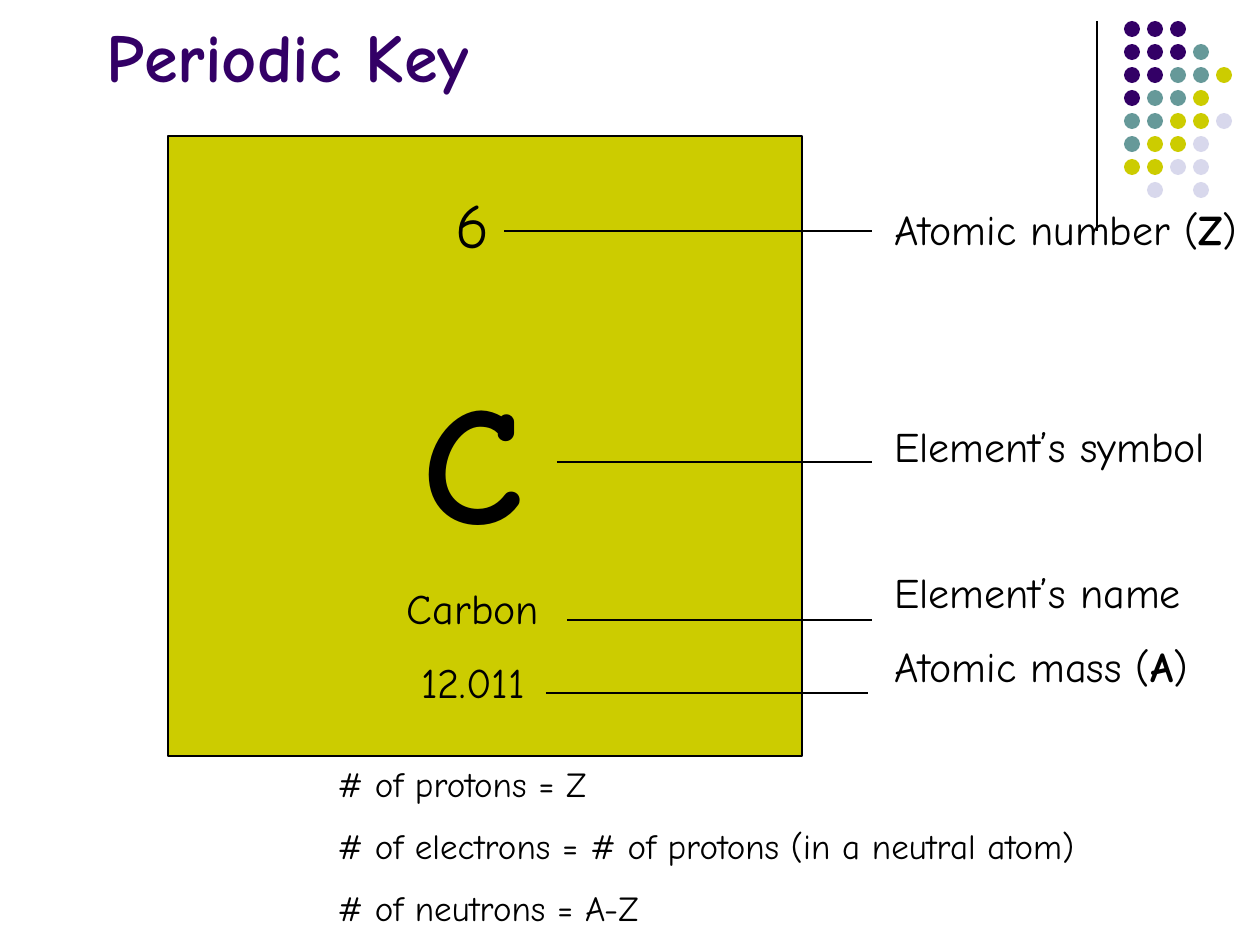
import pptx
import pptx.dml.color
import pptx.enum.shapes
import pptx.enum.text
import pptx.oxml
import pptx.util
from dataclasses import dataclass

EMU_PER_PX = 914400 / 126
ALIGN = pptx.enum.text.PP_ALIGN
ANCHOR = pptx.enum.text.MSO_ANCHOR
AUTO = pptx.enum.text.MSO_AUTO_SIZE
SHAPE = pptx.enum.shapes.MSO_SHAPE


@dataclass(frozen=True)
class Theme:
    font: str = "Comic Neue"
    ink: str = "000000"
    purple: str = "330066"
    teal: str = "669999"
    lime: str = "CCCC00"
    lilac: str = "D8D8EC"
    title: int = 39
    number: int = 36
    symbol: int = 96
    label: int = 24
    note: int = 20
    line_height: float = 1.13   # line pitch relative to type size
    gap: float = 0.57           # paragraph gap relative to type size


T = Theme()

# One letter per dot, one string per row
DOT_ROWS = ["PPP", "PPPT", "PPTTL", "PTTL", "TTLLV", "TLLV", "LLVV", " V V"]
DOT_COLORS = {"P": T.purple, "T": T.teal, "L": T.lime, "V": T.lilac}

# Pointer lines: x1, x2, y
POINTERS = [(504, 872, 231), (567, 872, 620), (546, 868, 693), (557, 872, 462)]


def px(n):
    return pptx.util.Emu(round(n * EMU_PER_PX))


def rgb(color):
    return pptx.dml.color.RGBColor.from_string(color)


def set_attrs(obj, values):
    for name, value in values.items():
        setattr(obj, name, value)


def place(shape, box):
    set_attrs(shape, dict(zip(("left", "top", "width", "height"), map(px, box))))


def add_run(p, text, size, color=T.ink, bold=False):
    r = p.add_run()
    r.text = text
    set_attrs(r.font, {"name": T.font, "size": pptx.util.Pt(size), "bold": bold})
    r.font.color.rgb = rgb(color)


def add_line(s, x1, y1, x2, y2, width=1):
    line = s.shapes.add_connector(
        pptx.enum.shapes.MSO_CONNECTOR.STRAIGHT, px(x1), px(y1), px(x2), px(y2))
    line.line.color.rgb = rgb(T.ink)
    line.line.width = pptx.util.Pt(width)
    line._element.spPr.append(pptx.oxml.parse_xml(
        '<a:effectLst xmlns:a="http://schemas.openxmlformats.org/drawingml/2006/main"/>'))


def add_filled(s, kind, box, fill, outline=None):
    sp = s.shapes.add_shape(kind, *map(px, box))
    sp.shadow.inherit = False
    sp.fill.solid()
    sp.fill.fore_color.rgb = rgb(fill)
    if outline:
        sp.line.color.rgb = rgb(outline)
        sp.line.width = pptx.util.Pt(1)
    else:
        sp.line.fill.background()


def add_text(s, box, paragraphs, align=ALIGN.LEFT):
    """Each paragraph is (size, skipped lines, [(text, bold), ...])."""
    tf = s.shapes.add_textbox(*map(px, box)).text_frame
    tf.word_wrap = True
    for i, (size, skipped, runs) in enumerate(paragraphs):
        p = tf.add_paragraph() if i else tf.paragraphs[0]
        p.alignment = align
        if i:
            space = T.gap + skipped * (T.line_height + T.gap)
            p.space_before = pptx.util.Pt(round(size * space, 1))
        for text, bold in runs:
            add_run(p, text, size, bold=bold)


def add_title(s, text):
    sp = s.shapes.title
    place(sp, (94, 21, 1071, 158))
    tf = sp.text_frame
    set_attrs(tf, {"auto_size": AUTO.NONE, "word_wrap": True,
                   "vertical_anchor": ANCHOR.BOTTOM, "margin_bottom": px(83)})
    p = tf.paragraphs[0]
    p.alignment = ALIGN.LEFT
    add_run(p, text, T.title, T.purple, True)


def add_dots(s, left=1124, top=21, pitch=23, size=16):
    for row, letters in enumerate(DOT_ROWS):
        for col, letter in enumerate(letters):
            if letter in DOT_COLORS:
                box = (left + col * pitch, top + row * pitch, size, size)
                add_filled(s, SHAPE.OVAL, box, DOT_COLORS[letter])


def main():
    prs = pptx.Presentation()
    set_attrs(prs, {"slide_width": px(1260), "slide_height": px(945)})
    s = prs.slides.add_slide(prs.slide_layouts[5])

    # Corner decoration and title
    add_line(s, 1097, 21, 1097, 231, 0.75)
    add_dots(s)
    add_title(s, "Periodic Key")

    # Element tile
    add_filled(s, SHAPE.FLOWCHART_PROCESS, (168, 136, 634, 620), T.lime, T.ink)
    add_text(s, (158, 179, 630, 542), [
        (T.number, 0, [("6", False)]),
        (T.symbol, 0, [("C", True)]),
        (T.label, 0, [("Carbon", False)]),
        (T.label, 0, [("12.011", False)]),
    ], ALIGN.CENTER)

    # Pointers and their labels
    for x1, x2, y in POINTERS:
        add_line(s, x1, y, x2, y)
    add_text(s, (882, 197, 433, 591), [
        (T.label, 0, [("Atomic number (", False), ("Z", True), (")", False)]),
        (T.label, 2, [("Element’s symbol", False)]),
        (T.label, 1, [("Element’s name", False)]),
        (T.label, 0, [("Atomic mass (", False), ("A", True), (")", False)]),
    ])

    # Particle counts
    notes = ["# of protons = Z",
             "# of electrons = # of protons (in a neutral atom)",
             "# of neutrons = A-Z"]
    add_text(s, (325, 756, 1124, 256), [(T.note, 0, [(n, False)]) for n in notes])

    prs.save("out.pptx")


if __name__ == "__main__":
    main()
